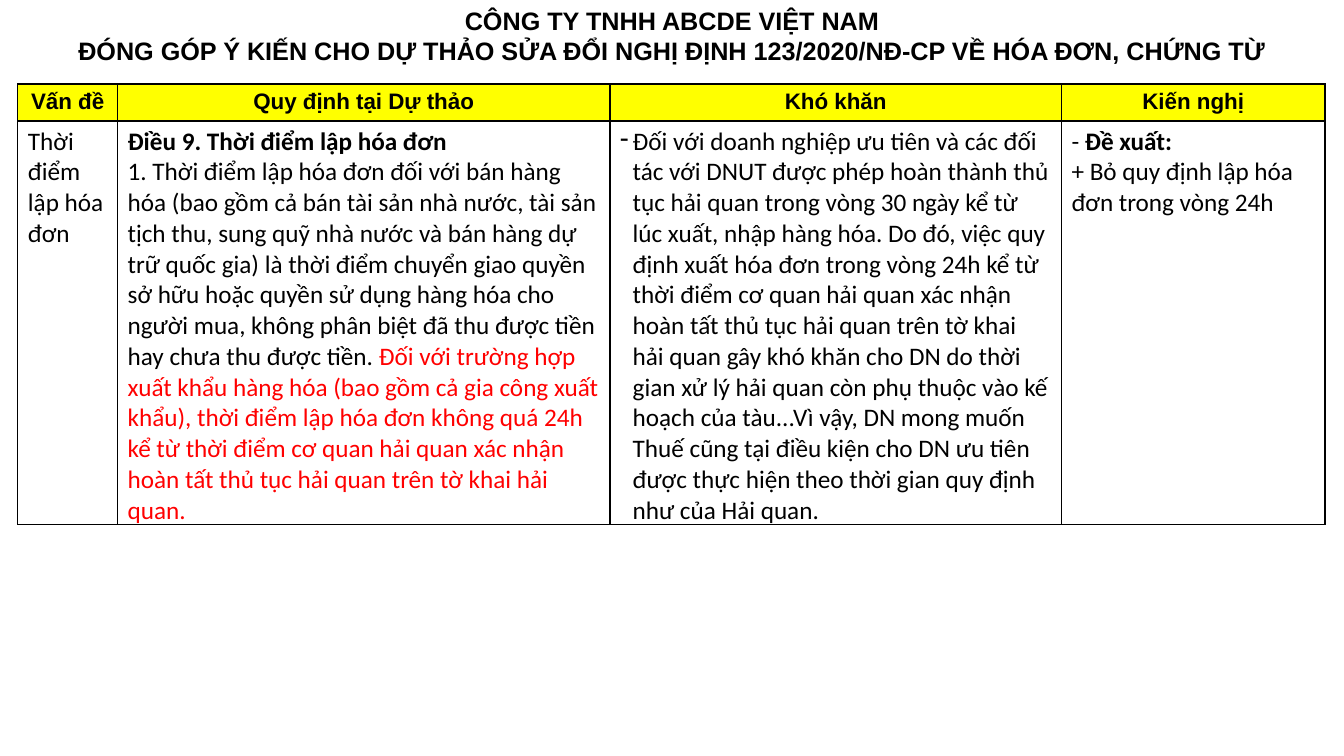
from lxml.etree import SubElement
from pptx import Presentation
from pptx.dml.color import RGBColor
from pptx.enum.text import MSO_AUTO_SIZE as AutoSize, PP_ALIGN as Align
from pptx.oxml.ns import qn
from pptx.util import Pt

PX = 9525
BLACK = RGBColor(0, 0, 0)
RED = RGBColor(255, 0, 0)
YELLOW = RGBColor(255, 255, 0)

TITLE = [
    "CÔNG TY TNHH ABCDE VIỆT NAM",
    "ĐÓNG GÓP Ý KIẾN CHO DỰ THẢO SỬA ĐỔI NGHỊ ĐỊNH 123/2020/NĐ-CP VỀ HÓA ĐƠN, CHỨNG TỪ",
]
HEADERS = ["Vấn đề", "Quy định tại Dự thảo", "Khó khăn", "Kiến nghị"]
COLUMN_WIDTHS = [95, 469, 430, 251]
ROW_HEIGHTS = [35, 384]

ISSUE = [[("Thời điểm lập hóa đơn", False, BLACK)]]
DRAFT_RULE = [
    [("Điều 9. Thời điểm lập hóa đơn", True, BLACK)],
    [
        ("1. Thời điểm lập hóa đơn đối với bán hàng hóa (bao gồm cả bán tài sản nhà nước, "
         "tài sản tịch thu, sung quỹ nhà nước và bán hàng dự trữ quốc gia) là thời điểm "
         "chuyển giao quyền sở hữu hoặc quyền sử dụng hàng hóa cho người mua, không phân "
         "biệt đã thu được tiền hay chưa thu được tiền. ", False, BLACK),
        ("Đối với trường hợp xuất khẩu hàng hóa (bao gồm cả gia công xuất khẩu), thời điểm "
         "lập hóa đơn không quá 24h kể từ thời điểm cơ quan hải quan xác nhận hoàn tất thủ "
         "tục hải quan trên tờ khai hải quan.", False, RED),
    ],
]
DIFFICULTY = [[
    ("Đối với doanh nghiệp ưu tiên và các đối tác với DNUT được phép hoàn thành thủ tục hải "
     "quan trong vòng 30 ngày kể từ lúc xuất, nhập hàng hóa. Do đó, việc quy định xuất hóa "
     "đơn trong vòng 24h kể từ thời điểm cơ quan hải quan xác nhận hoàn tất thủ tục hải quan "
     "trên tờ khai hải quan gây khó khăn cho DN do thời gian xử lý hải quan còn phụ thuộc vào "
     "kế hoạch của tàu...Vì vậy, DN mong muốn Thuế cũng tại điều kiện cho DN ưu tiên được "
     "thực hiện theo thời gian quy định như của Hải quan.", False, BLACK),
]]
PROPOSAL = [
    [("- ", False, BLACK), ("Đề xuất:", True, BLACK)],
    [("+ Bỏ quy định lập hóa đơn trong vòng 24h", False, BLACK)],
]


def style_run(span, font, size, bold, color):
    """Set the font of one run."""
    span.font.name = font
    span.font.size = Pt(size)
    span.font.bold = bold
    span.font.color.rgb = color


def write_headings(frame, lines, size):
    """Write centred bold lines into a text frame."""
    frame.text = "\n".join(lines)
    for para in frame.paragraphs:
        para.alignment = Align.CENTER
        style_run(para.runs[0], "Arial", size, True, BLACK)


def write_body(frame, paragraphs):
    """Write paragraphs of styled runs into a text frame."""
    frame.text = "\n".join("" for _ in paragraphs)
    for para, parts in zip(frame.paragraphs, paragraphs):
        for text, bold, color in parts:
            span = para.add_run()
            span.text = text
            style_run(span, "Calibri", 18, bold, color)


def add_dash(para, indent):
    """Give a paragraph a hanging dash bullet."""
    properties = para._p.get_or_add_pPr()
    properties.set("marL", str(indent * PX))
    properties.set("indent", str(-indent * PX))
    SubElement(properties, qn("a:buFontTx"))
    SubElement(properties, qn("a:buChar"), char="-")


def add_borders(cell):
    """Draw a thin black line on each side of a cell."""
    properties = cell._tc.get_or_add_tcPr()
    for side in "LRTB":
        line = SubElement(properties, qn(f"a:ln{side}"), w=str(Pt(1)))
        fill = SubElement(line, qn("a:solidFill"))
        SubElement(fill, qn("a:srgbClr"), val=str(BLACK))


def add_title(page, left, top, width, height):
    """Place the two-line slide title."""
    box = page.shapes.add_textbox(left * PX, top * PX, width * PX, height * PX)
    box.text_frame.word_wrap = True
    box.text_frame.auto_size = AutoSize.SHAPE_TO_FIT_TEXT
    write_headings(box.text_frame, TITLE, 18)


def add_comments_table(page, left, top):
    """Place the table of comments on the draft."""
    size = (sum(COLUMN_WIDTHS) * PX, sum(ROW_HEIGHTS) * PX)
    table = page.shapes.add_table(
        len(ROW_HEIGHTS), len(COLUMN_WIDTHS), left * PX, top * PX, *size).table
    table.first_row = table.horz_banding = False
    for column, width in zip(table.columns, COLUMN_WIDTHS):
        column.width = width * PX
    for row, height in zip(table.rows, ROW_HEIGHTS):
        row.height = height * PX
    for cell in table.iter_cells():
        add_borders(cell)
    for cell, header in zip(table.rows[0].cells, HEADERS):
        cell.fill.solid()
        cell.fill.fore_color.rgb = YELLOW
        write_headings(cell.text_frame, [header], 16)
    for cell, body in zip(table.rows[1].cells, [ISSUE, DRAFT_RULE, DIFFICULTY, PROPOSAL]):
        cell.fill.background()
        cell.margin_bottom = 0
        write_body(cell.text_frame, body)
    add_dash(table.cell(1, 2).text_frame.paragraphs[0], 12)


def main():
    """Build and save the deck."""
    deck = Presentation()
    deck.slide_width, deck.slide_height = 1280 * PX, 720 * PX
    page = deck.slides.add_slide(deck.slide_layouts[6])
    add_title(page, 0, 0, 1280, 68)
    add_comments_table(page, 17, 80)
    deck.save("out.pptx")


if __name__ == "__main__":
    main()
